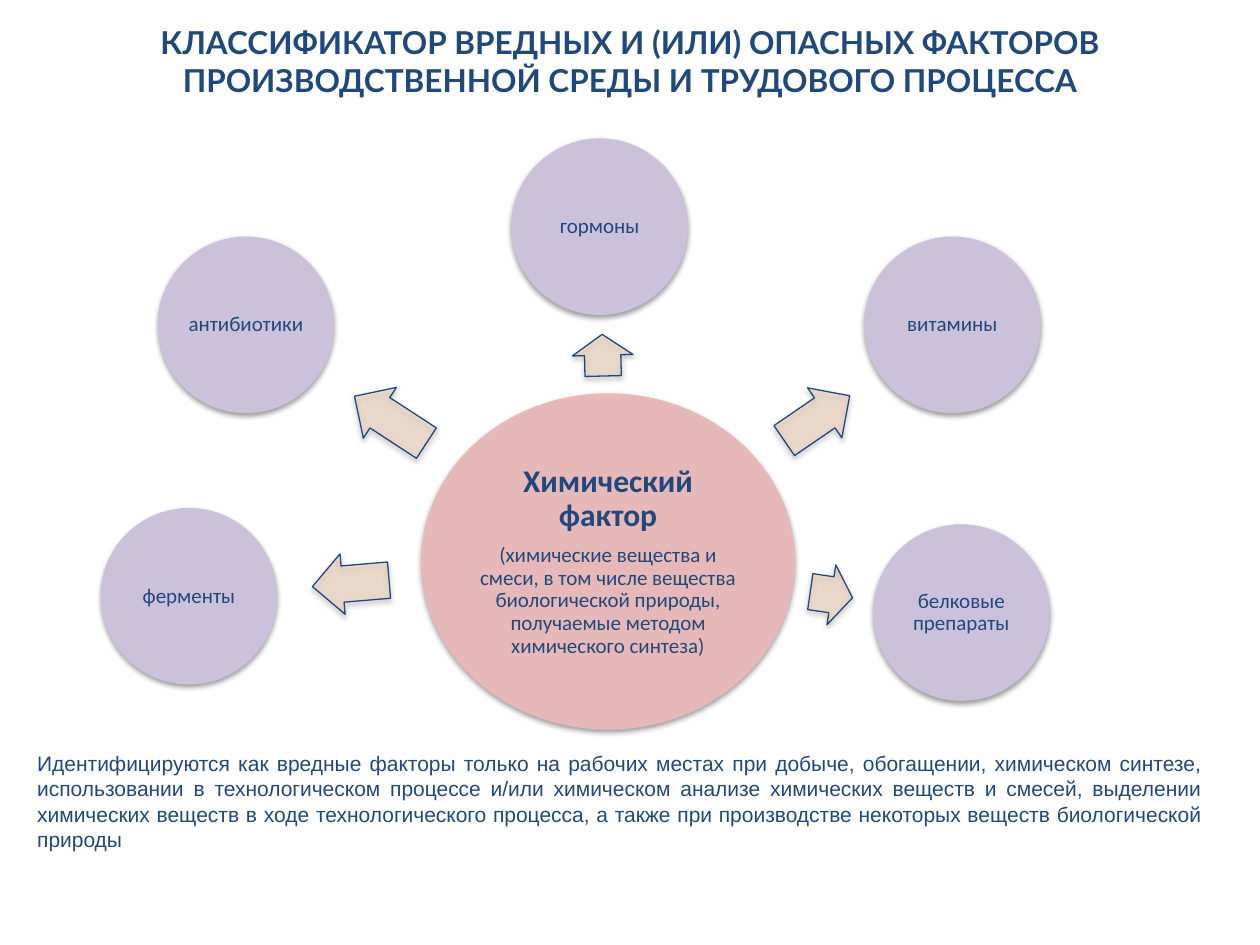
import dataclasses

import lxml.etree
import pptx
import pptx.dml.color
import pptx.enum.shapes
import pptx.enum.text
import pptx.oxml.ns
import pptx.util

Cm, Pt = pptx.util.Cm, pptx.util.Pt
qn = pptx.oxml.ns.qn
SHAPE = pptx.enum.shapes.MSO_SHAPE
ALIGN = pptx.enum.text.PP_ALIGN
FIT = pptx.enum.text.MSO_AUTO_SIZE
MIDDLE = pptx.enum.text.MSO_ANCHOR.MIDDLE


@dataclasses.dataclass
class Theme:
    ink: str = "1F497D"
    core: str = "E6B9B8"
    leaf: str = "CCC1DA"
    arrow: str = "FAC090"
    large: int = 18
    small: int = 12
    head_font: str = "Lato"
    body_font: str = "Calibri"
    note_font: str = "Arial"


def rgb(code):
    return pptx.dml.color.RGBColor.from_string(code)


def assign(target, values):
    for name, value in values.items():
        setattr(target, name, value)


def place(mid_x, mid_y, width, height):
    """Turn a centre and a size in cm into left, top, width, height."""
    return [Cm(v) for v in (mid_x - width / 2, mid_y - height / 2, width, height)]


class Page:
    """Holds the theme and the slide being drawn."""

    def __init__(self, slide, theme):
        self.slide, self.theme = slide, theme

    def fill_text(self, frame, lines, font, align, **style):
        """Fill a frame with (text, size, bold) lines."""
        frame.word_wrap = True
        for i, (text, size, bold) in enumerate(lines):
            para = frame.paragraphs[0] if i == 0 else frame.add_paragraph()
            assign(para, {"alignment": align, **style})
            if style:
                para.space_after = Pt(0.35 * size)
            run = para.add_run()
            run.text = text
            assign(run.font, {"size": Pt(size), "bold": bold, "name": font})
            run.font.color.rgb = rgb(self.theme.ink)

    def title(self, text, left, top, width, height):
        shape = self.slide.shapes.title
        assign(shape, {"left": Cm(left), "top": Cm(top),
                       "width": Cm(width), "height": Cm(height)})
        frame = shape.text_frame
        assign(frame, {"auto_size": FIT.NONE, "vertical_anchor": MIDDLE})
        self.fill_text(frame, [(text, self.theme.large, True)],
                       self.theme.head_font, ALIGN.CENTER)

    def shape(self, kind, box, color):
        """Add a filled shape with a soft shadow below it."""
        shape = self.slide.shapes.add_shape(kind, *box)
        shape.fill.solid()
        shape.fill.fore_color.rgb = rgb(color)
        shape.line.fill.background()
        shape.shadow.inherit = False
        glow = lxml.etree.SubElement(
            shape.element.spPr.find(qn("a:effectLst")), qn("a:outerShdw"),
            blurRad="40000", dist="20000", dir="5400000", rotWithShape="0")
        shade = lxml.etree.SubElement(glow, qn("a:srgbClr"), val="000000")
        lxml.etree.SubElement(shade, qn("a:alpha"), val="38000")
        return shape

    def circle(self, box, color, lines, inset):
        frame = self.shape(SHAPE.OVAL, box, color).text_frame
        sides = ("margin_left", "margin_top", "margin_right", "margin_bottom")
        assign(frame, {**dict.fromkeys(sides, Cm(inset)), "vertical_anchor": MIDDLE})
        self.fill_text(frame, lines, self.theme.body_font, ALIGN.CENTER,
                       line_spacing=0.9)

    def arrow(self, box, angle):
        shape = self.shape(SHAPE.RIGHT_ARROW, box, self.theme.arrow)
        shape.adjustments[0], shape.adjustments[1] = 0.6, 0.5
        shape.rotation = angle
        shape.line.color.rgb = rgb(self.theme.ink)
        shape.line.width = Pt(0.75)
        color = shape.element.spPr.find(qn("a:solidFill"))[0]
        lxml.etree.SubElement(color, qn("a:alpha"), val="30000")

    def note(self, text, left, top, width, height):
        box = self.slide.shapes.add_textbox(Cm(left), Cm(top), Cm(width), Cm(height))
        box.text_frame.auto_size = FIT.SHAPE_TO_FIT_TEXT
        self.fill_text(box.text_frame, [(text, self.theme.small, False)],
                       self.theme.note_font, ALIGN.JUSTIFY)


# Label, circle centre, arrow centre, arrow length, arrow angle
LEAVES = [
    ("гормоны", (12.09, 4.57), (12.15, 7.16), 0.84, 268.6),
    ("витамины", (19.2, 6.55), (16.47, 8.43), 1.6, 325.6),
    ("белковые препараты", (19.38, 12.35), (16.76, 11.99), 0.86, 8.3),
    ("ферменты", (3.81, 12.02), (7.07, 11.76), 1.55, 175.2),
    ("антибиотики", (4.96, 6.55), (7.87, 8.46), 1.73, 213.1),
]
LEAF_SIZE = 3.56
ARROW_WIDTH = 1.22


def main():
    deck = pptx.Presentation()
    assign(deck, {"slide_width": Cm(25.4), "slide_height": Cm(19.05)})
    theme = Theme()
    page = Page(deck.slides.add_slide(deck.slide_layouts[5]), theme)

    page.title("КЛАССИФИКАТОР ВРЕДНЫХ И (ИЛИ) ОПАСНЫХ ФАКТОРОВ "
               "ПРОИЗВОДСТВЕННОЙ СРЕДЫ И ТРУДОВОГО ПРОЦЕССА",
               1.3, 0.13, 22.8, 2.21)
    page.circle(place(12.26, 11.32, 7.54, 6.78), theme.core, [
        ("Химический фактор", theme.large, True),
        ("(химические вещества и смеси, в том числе вещества биологической "
         "природы, получаемые методом химического синтеза)", theme.small, False),
    ], 0.08)
    for label, spot, mid, length, angle in LEAVES:
        page.arrow(place(*mid, length, ARROW_WIDTH), angle)
        page.circle(place(*spot, LEAF_SIZE, LEAF_SIZE), theme.leaf,
                    [(label, theme.small, False)], 0.05)
    page.note("Идентифицируются как вредные факторы только на рабочих местах при "
              "добыче, обогащении, химическом синтезе, использовании в "
              "технологическом процессе и/или химическом анализе химических "
              "веществ и смесей, выделении химических веществ в ходе "
              "технологического процесса, а также при производстве некоторых "
              "веществ биологической природы", 0.5, 15.01, 24, 2.31)
    deck.save("out.pptx")


if __name__ == "__main__":
    main()
